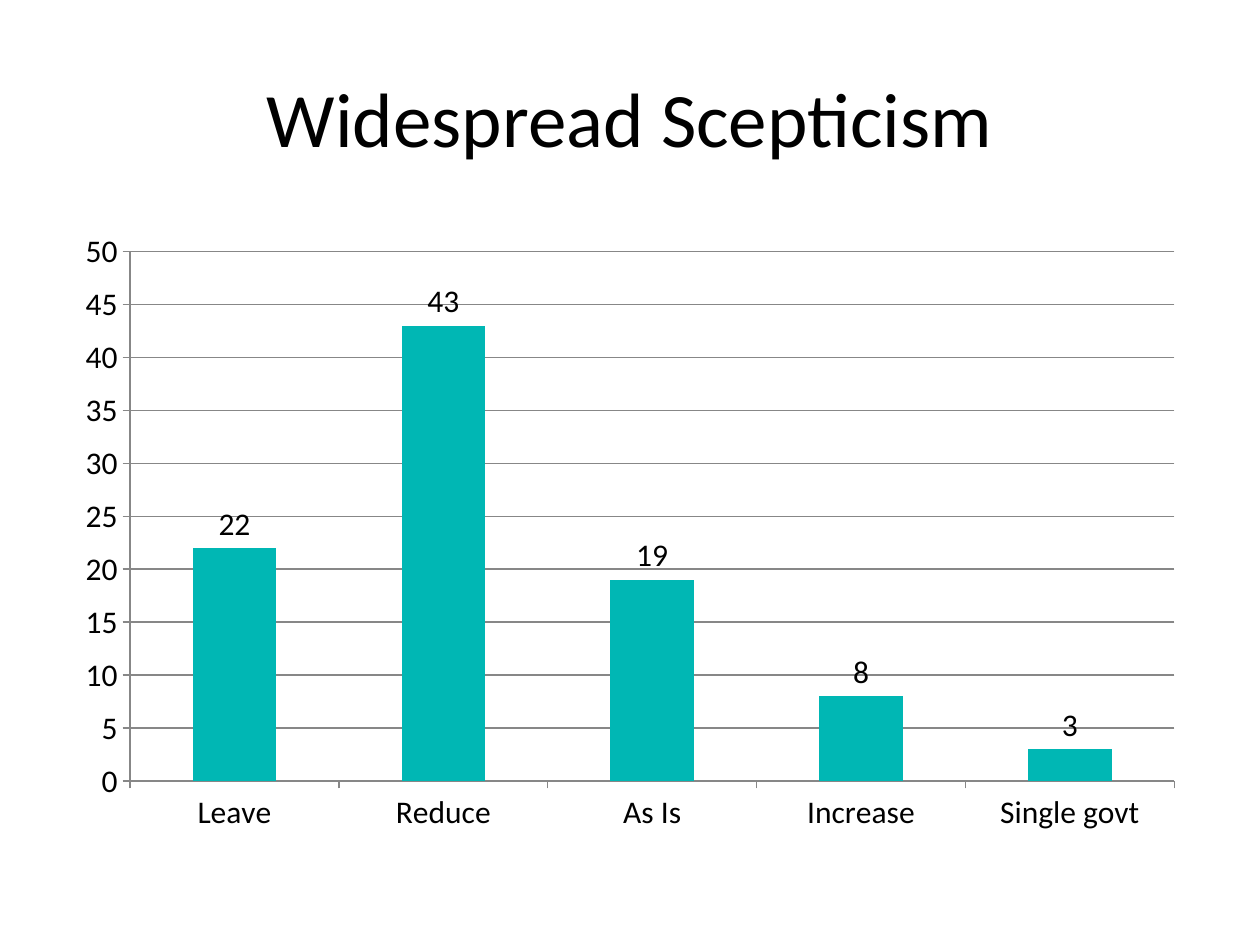
from pptx import Presentation
from pptx.chart.data import CategoryChartData
from pptx.dml.color import RGBColor
from pptx.enum.chart import XL_CHART_TYPE, XL_LABEL_POSITION, XL_TICK_MARK
from pptx.enum.text import MSO_ANCHOR, PP_ALIGN
from pptx.util import Emu, Pt

PX = 914400 // 126
COLORS = {"text": "000000", "bar": "00B7B4", "line": "878787"}
VIEWS = {"Leave": 22, "Reduce": 43, "As Is": 19, "Increase": 8, "Single govt": 3}


def px(*sizes):
    return [Emu(size * PX) for size in sizes]


class Deck:
    font = "Calibri"

    def __init__(self, width, height):
        self.prs = Presentation()
        self.prs.slide_width, self.prs.slide_height = px(width, height)
        self.slide = self.prs.slides.add_slide(self.prs.slide_layouts[5])

    def color(self, name):
        return RGBColor.from_string(COLORS[name])

    def style(self, font, size):
        font.name, font.size = self.font, Pt(size)
        font.color.rgb = self.color("text")

    def title(self, text, box, size):
        shape = self.slide.shapes.title
        shape.left, shape.top, shape.width, shape.height = px(*box)
        frame = shape.text_frame
        frame.text = text
        frame.vertical_anchor = MSO_ANCHOR.MIDDLE
        para = frame.paragraphs[0]
        para.alignment = PP_ALIGN.CENTER
        self.style(para.runs[0].font, size)

    def line(self, form):
        form.line.color.rgb = self.color("line")
        form.line.width = Pt(0.75)

    def columns(self, values, box, size):
        data = CategoryChartData()
        data.categories = list(values)
        data.add_series("Series 1", list(values.values()))
        chart = self.slide.shapes.add_chart(
            XL_CHART_TYPE.COLUMN_CLUSTERED, *px(*box), data).chart
        chart.has_legend = chart.has_title = False
        self.style(chart.font, size)

        for axis in (chart.category_axis, chart.value_axis):
            axis.major_tick_mark = XL_TICK_MARK.OUTSIDE
            axis.minor_tick_mark = XL_TICK_MARK.NONE
            self.line(axis.format)
        scale = chart.value_axis
        scale.minimum_scale, scale.maximum_scale, scale.major_unit = 0, 50, 5
        scale.has_major_gridlines = True
        self.line(scale.major_gridlines.format)

        plot = chart.plots[0]
        plot.gap_width = 150
        plot.vary_by_categories = False
        fill = plot.series[0].format.fill
        fill.solid()
        fill.fore_color.rgb = self.color("bar")
        plot.has_data_labels = True
        labels = plot.data_labels
        labels.show_value = True
        labels.position = XL_LABEL_POSITION.OUTSIDE_END
        self.style(labels.font, size)


def main():
    deck = Deck(1260, 945)
    deck.title("Widespread Scepticism", (63, 38, 1134, 158), 44)
    deck.columns(VIEWS, (63, 220, 1134, 624), 18)
    deck.prs.save("out.pptx")


if __name__ == "__main__":
    main()
